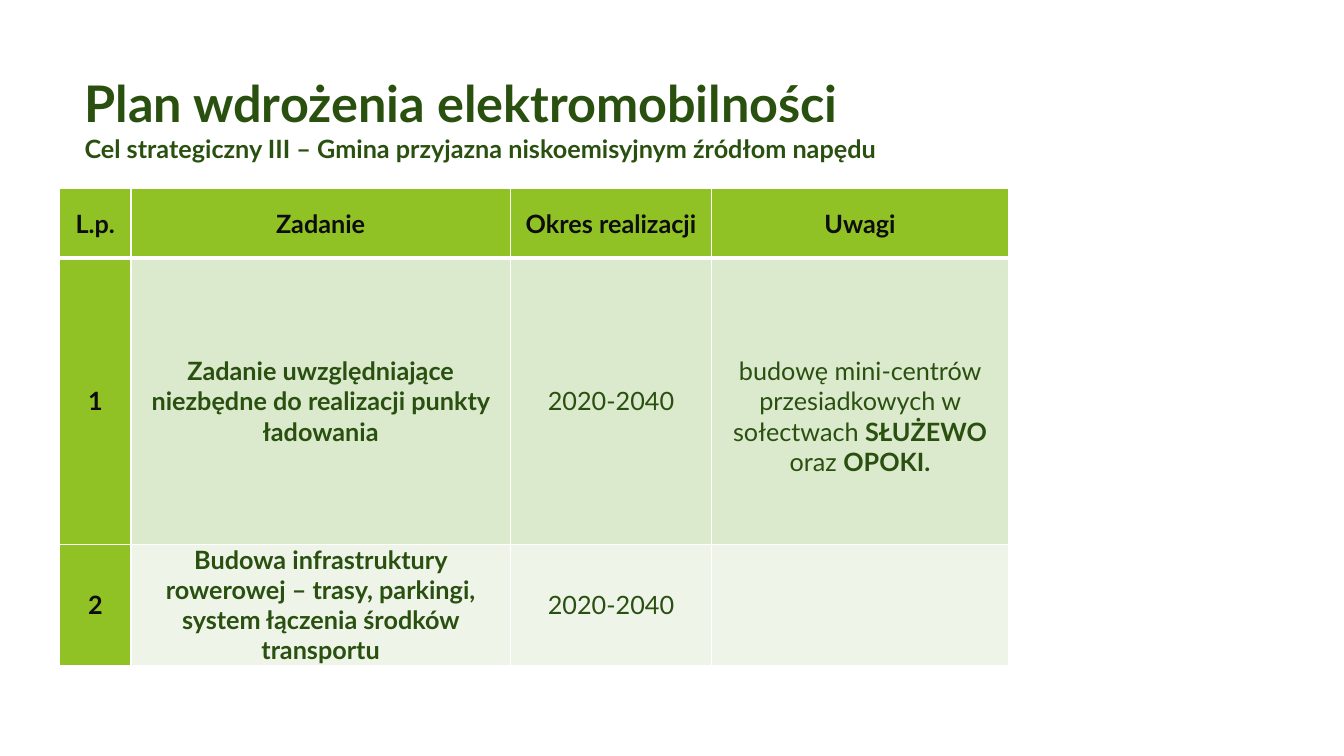
from lxml import etree
from pptx import Presentation
from pptx.dml.color import RGBColor
from pptx.enum.text import MSO_ANCHOR, PP_ALIGN
from pptx.oxml.ns import qn
from pptx.util import Inches, Pt

MIDDLE = MSO_ANCHOR.MIDDLE
TOP = MSO_ANCHOR.TOP
CENTER = PP_ALIGN.CENTER

COLORS = {
    "heading": "2A5010",
    "label": "0D0D0D",
    "accent": "90C226",
    "band_dark": "DBE9CD",
    "band_light": "EEF4E8",
    "border": "FFFFFF",
}
FONT = "Lato"
COLUMN_WIDTHS = [0.71, 3.76, 2, 2.94]
ROW_HEIGHTS = [0.69, 2.84, 1.2]
ROW_FILLS = ["accent", "band_dark", "band_light"]
TASK_ROWS = [
    [
        [("L.p.", True)],
        [("Zadanie", True)],
        [("Okres realizacji", True)],
        [("Uwagi", True)],
    ],
    [
        [("1", True)],
        [("Zadanie uwzględniające niezbędne do realizacji punkty ładowania", True)],
        [("2020-2040", False)],
        [
            ("budowę mini-centrów przesiadkowych w sołectwach ", False),
            ("SŁUŻEWO", True),
            (" oraz ", False),
            ("OPOKI.", True),
        ],
    ],
    [
        [("2", True)],
        [("Budowa infrastruktury rowerowej – trasy, parkingi, "
          "system łączenia środków transportu", True)],
        [("2020-2040", False)],
        [],
    ],
]


def add_span(para, text, size, color, bold=True):
    span = para.add_run()
    span.text = text
    span.font.name = FONT
    span.font.size = Pt(size)
    span.font.bold = bold
    span.font.color.rgb = RGBColor.from_string(COLORS[color])


def add_heading(page, left, top, width, height):
    box = page.shapes.add_textbox(Inches(left), Inches(top), Inches(width), Inches(height))
    frame = box.text_frame
    frame.word_wrap = True
    frame.vertical_anchor = TOP
    para = frame.paragraphs[0]
    add_span(para, "Plan wdrożenia elektromobilności", 36, "heading")
    para.add_line_break()
    add_span(para, "Cel strategiczny III – Gmina przyjazna niskoemisyjnym źródłom napędu",
             18, "heading")


def set_borders(cell, widths):
    properties = cell._tc.get_or_add_tcPr()
    for position, (side, width) in enumerate(widths.items()):
        line = etree.Element(qn(f"a:{side}"), w=str(Pt(width)))
        fill = etree.SubElement(line, qn("a:solidFill"))
        etree.SubElement(fill, qn("a:srgbClr"), val=COLORS["border"])
        properties.insert(position, line)


def fill_cell(cell, spans, fill, color):
    cell.fill.solid()
    cell.fill.fore_color.rgb = RGBColor.from_string(COLORS[fill])
    cell.vertical_anchor = MIDDLE
    cell.margin_left = cell.margin_right = Inches(0.07)
    cell.margin_top = cell.margin_bottom = 0
    para = cell.text_frame.paragraphs[0]
    para.alignment = CENTER
    for text, bold in spans:
        add_span(para, text, 18, color, bold)


def add_task_table(page, left, top, width, height):
    table = page.shapes.add_table(
        len(ROW_HEIGHTS), len(COLUMN_WIDTHS),
        Inches(left), Inches(top), Inches(width), Inches(height)).table
    for column, size in zip(table.columns, COLUMN_WIDTHS):
        column.width = Inches(size)
    for row, size in zip(table.rows, ROW_HEIGHTS):
        row.height = Inches(size)
    for row_index, row in enumerate(TASK_ROWS):
        for column_index, spans in enumerate(row):
            cell = table.cell(row_index, column_index)
            is_label = row_index == 0 or column_index == 0
            fill = "accent" if is_label else ROW_FILLS[row_index]
            fill_cell(cell, spans, fill, "label" if is_label else "heading")
            set_borders(cell, {
                "lnL": 1,
                "lnR": 1,
                "lnT": 3 if row_index == 1 else 1,
                "lnB": 3 if row_index == 0 else 1,
            })
    table.cell(1, 3).margin_top = Inches(0.3)


def main():
    deck = Presentation()
    deck.slide_width = Inches(13.33)
    deck.slide_height = Inches(7.5)
    page = deck.slides.add_slide(deck.slide_layouts[6])
    add_heading(page, 0.74, 0.67, 9.4, 1.44)
    add_task_table(page, 0.59, 1.87, sum(COLUMN_WIDTHS), sum(ROW_HEIGHTS))
    deck.save("out.pptx")


if __name__ == "__main__":
    main()
